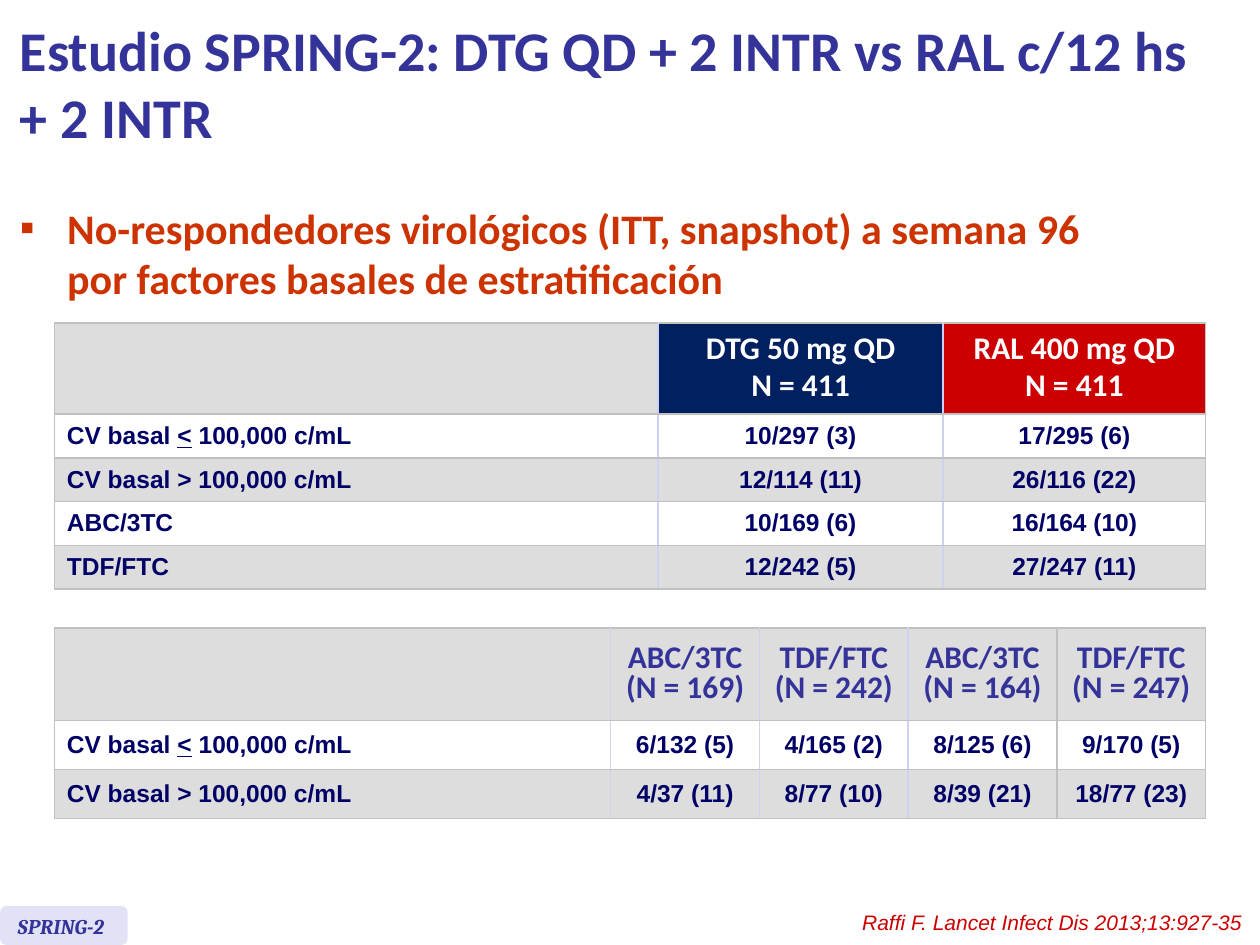
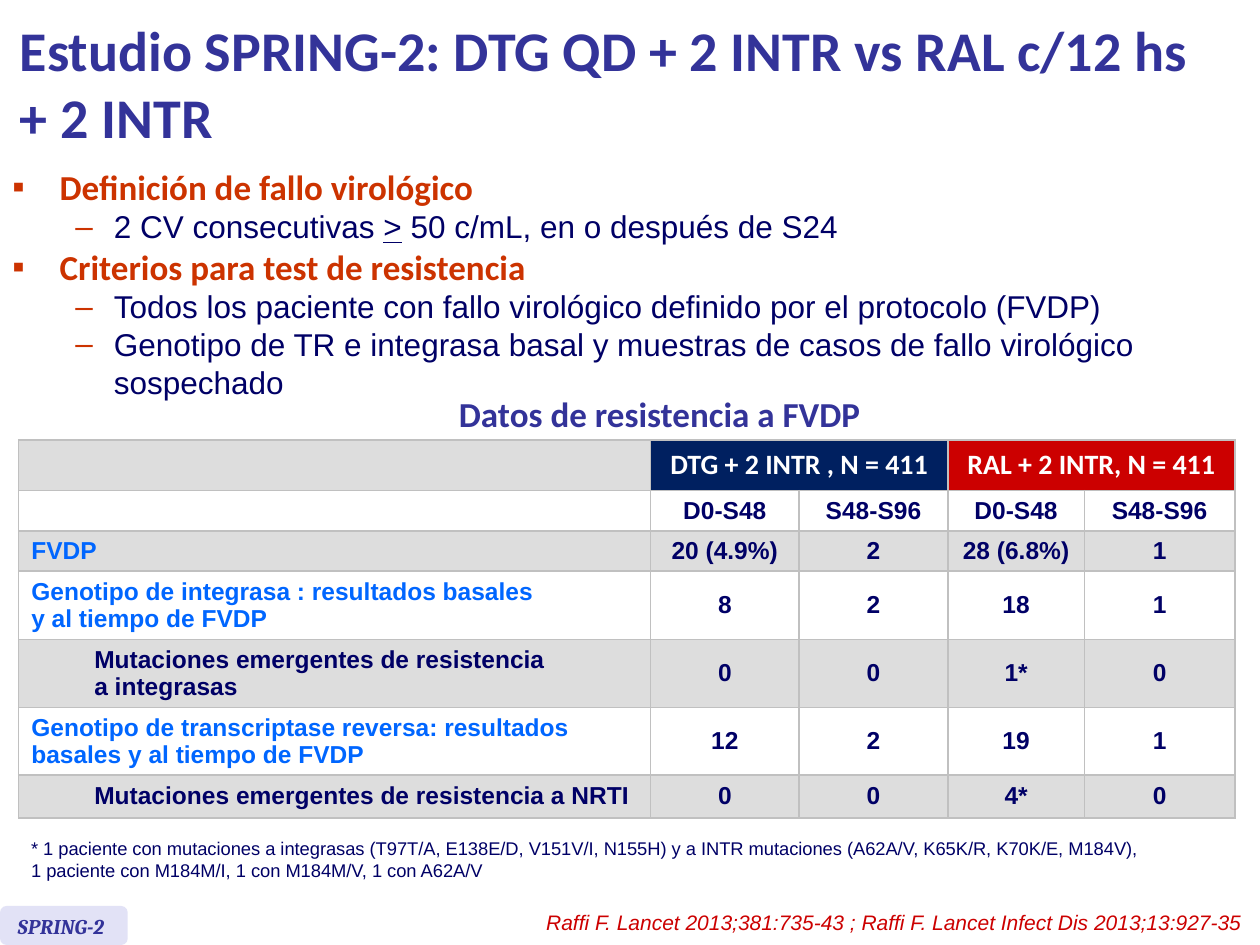
"""Build two SPRING-2 study slides: non-responders by stratum and resistance data."""
from dataclasses import dataclass, replace

from lxml import etree
from pptx import Presentation
from pptx.dml.color import RGBColor
from pptx.enum.shapes import MSO_SHAPE
from pptx.enum.text import MSO_ANCHOR, PP_ALIGN
from pptx.oxml.ns import qn
from pptx.util import Pt

LEFT, CENTER, RIGHT = PP_ALIGN.LEFT, PP_ALIGN.CENTER, PP_ALIGN.RIGHT
TOP, MIDDLE = MSO_ANCHOR.TOP, MSO_ANCHOR.MIDDLE
ROUNDED = MSO_SHAPE.ROUNDED_RECTANGLE

INDIGO = RGBColor(0x33, 0x33, 0x99)
ORANGE = RGBColor(0xCC, 0x33, 0x00)
NAVY = RGBColor(0x00, 0x00, 0x66)
DEEP_BLUE = RGBColor(0x00, 0x20, 0x60)
BRIGHT_BLUE = RGBColor(0x00, 0x66, 0xFF)
RED = RGBColor(0xCC, 0x00, 0x00)
WHITE = RGBColor(0xFF, 0xFF, 0xFF)
GREY = RGBColor(0xDD, 0xDD, 0xDD)
LAVENDER = RGBColor(0xE2, 0xE2, 0xF6)
BORDER_GREY = RGBColor(0xC0, 0xC0, 0xC0)
BORDER_LILAC = RGBColor(0xD0, 0xD0, 0xF0)


@dataclass(frozen=True)
class Style:
    """Character formatting of a span."""
    font: str
    size: float
    color: RGBColor
    bold: bool = False
    italic: bool = False


TITLE = Style("Calibri", 32, INDIGO, bold=True)
HEADLINE = Style("Calibri", 24, ORANGE, bold=True)
TOPIC = Style("Calibri", 20, ORANGE, bold=True)
DETAIL = Style("Arial", 18, NAVY)
CAPTION = Style("Calibri", 20, INDIGO, bold=True)
ARM_HEAD = Style("Calibri", 18, WHITE, bold=True)
ARM_HEAD_SMALL = replace(ARM_HEAD, size=16)
DRUG_HEAD = replace(ARM_HEAD, color=INDIGO)
CELL = Style("Arial", 14, NAVY, bold=True)
CELL_BLUE = replace(CELL, color=BRIGHT_BLUE)
FOOTNOTE = Style("Arial", 10.5, NAVY)
CITATION = Style("Arial", 12, RED, italic=True)
TAG = Style("Cambria", 12, INDIGO, bold=True, italic=True)

LOW_LOAD = "CV basal _<_ 100,000 c/mL"
HIGH_LOAD = "CV basal > 100,000 c/mL"


def add_spans(para, text, style):
    """Add text to a paragraph; \\v breaks the line and _x_ underlines x."""
    for line_index, line in enumerate(text.split("\v")):
        if line_index:
            para.add_line_break()
        for part_index, part in enumerate(line.split("_")):
            if not part:
                continue
            span = para.add_run()
            span.text = part
            font = span.font
            font.name, font.size = style.font, Pt(style.size)
            font.bold, font.italic = style.bold, style.italic
            font.color.rgb = style.color
            if part_index % 2:
                font.underline = True


def fill_frame(frame, text, style, align=LEFT, line_spacing=None, gap=0):
    """Write newline-separated paragraphs into a text frame."""
    for index, content in enumerate(text.split("\n")):
        para = frame.add_paragraph() if index else frame.paragraphs[0]
        para.alignment = align
        if line_spacing:
            para.line_spacing = line_spacing
        if index and gap:
            para.space_before = Pt(gap)
        add_spans(para, content, style)


def add_frame(page, left, top, width, height, anchor=TOP):
    """Add an empty wrapping text box and return its frame."""
    box = page.shapes.add_textbox(Pt(left), Pt(top), Pt(width), Pt(height))
    frame = box.text_frame
    frame.word_wrap = True
    frame.vertical_anchor = anchor
    return frame


def add_text(page, place, text, style, align=LEFT, anchor=TOP):
    """Add a text box with one style."""
    fill_frame(add_frame(page, *place, anchor=anchor), text, style, align)


def set_indent(para, left, first=0):
    """Set the left margin and first-line indent of a paragraph."""
    properties = para._p.get_or_add_pPr()
    properties.set("marL", str(Pt(left)))
    properties.set("indent", str(Pt(first)))
    return properties


def add_bullets(page, place, items):
    """Add a bullet list of (style, text) items; details sit one level down."""
    frame = add_frame(page, *place)
    for index, (style, text) in enumerate(items):
        para = frame.add_paragraph() if index else frame.paragraphs[0]
        if style is DETAIL:
            para.level = 1
            properties, mark = set_indent(para, 58, -22), "–"
        else:
            properties, mark = set_indent(para, 27, -27), "▪"
        bullet_color = etree.SubElement(properties, qn("a:buClr"))
        etree.SubElement(bullet_color, qn("a:srgbClr"), val=str(ORANGE))
        etree.SubElement(properties, qn("a:buFont"), typeface="Arial")
        etree.SubElement(properties, qn("a:buChar"), char=mark)
        add_spans(para, text, style)


def set_borders(cell, left, right):
    """Draw one-point borders, with grey above and below."""
    properties = cell._tc.get_or_add_tcPr()
    sides = {"a:lnL": left, "a:lnR": right, "a:lnT": BORDER_GREY, "a:lnB": BORDER_GREY}
    for index, (tag, color) in enumerate(sides.items()):
        line = etree.Element(qn(tag), w=str(Pt(1)))
        solid = etree.SubElement(line, qn("a:solidFill"))
        etree.SubElement(solid, qn("a:srgbClr"), val=str(color))
        properties.insert(index, line)


def add_grid(page, left, top, widths, heights, lilac_edges=()):
    """Add a table with alternating grey and white rows."""
    table = page.shapes.add_table(len(heights), len(widths), Pt(left), Pt(top),
                                  Pt(sum(widths)), Pt(sum(heights))).table
    table.first_row = table.horz_banding = False
    for column, width in zip(table.columns, widths):
        column.width = Pt(width)
    edges = [BORDER_LILAC if edge in lilac_edges else BORDER_GREY
             for edge in range(len(widths) + 1)]
    for row_index, (row, height) in enumerate(zip(table.rows, heights)):
        row.height = Pt(height)
        for index, cell in enumerate(row.cells):
            cell.fill.solid()
            cell.fill.fore_color.rgb = WHITE if row_index % 2 else GREY
            cell.vertical_anchor = MIDDLE
            cell.margin_top = cell.margin_bottom = 0
            set_borders(cell, edges[index], edges[index + 1])
    return table


def write_cell(cell, text, style, align=CENTER, line_spacing=None, fill=None):
    """Write a table cell and optionally recolour it."""
    fill_frame(cell.text_frame, text, style, align, line_spacing, gap=3.6)
    if fill is not None:
        cell.fill.solid()
        cell.fill.fore_color.rgb = fill


def write_rows(table, first_row, rows):
    """Write body rows, each with a left label and centred values."""
    for row_index, (label, *values) in enumerate(rows, first_row):
        if label:
            write_cell(table.cell(row_index, 0), label, CELL, LEFT)
        for column, value in enumerate(values, 1):
            write_cell(table.cell(row_index, column), value, CELL)


def add_page(deck, citation):
    """Add a blank page with the shared title, study tag and citation."""
    page = deck.slides.add_slide(deck.slide_layouts[6])
    add_text(page, (4.3, 3.6, 711, 87),
             "Estudio SPRING-2: DTG QD + 2 INTR vs RAL c/12 hs\v+ 2 INTR",
             TITLE, anchor=MIDDLE)
    add_text(page, (273, 516, 444, 22), citation, CITATION, RIGHT)
    badge = page.shapes.add_shape(ROUNDED, 0, Pt(517.7), Pt(73), Pt(22.3))
    badge.shadow.inherit = False
    badge.fill.solid()
    badge.fill.fore_color.rgb = LAVENDER
    badge.line.fill.background()
    add_text(page, (3, 518.4, 72, 21.6), "SPRING-2", TAG)
    return page


def add_nonresponder_page(deck):
    """Add the page of non-responders by baseline stratum."""
    page = add_page(deck, "Raffi F. Lancet Infect Dis 2013;13:927-35")
    add_bullets(page, (4.3, 112, 711, 63), [
        (HEADLINE, "No-respondedores virológicos (ITT, snapshot) a semana 96"
                   "\vpor factores basales de estratificación")])

    arms = add_grid(page, 31, 184.7, (345, 163, 150), (52,) + (25,) * 4, {1, 2})
    write_cell(arms.cell(0, 1), "DTG 50 mg QD\nN = 411", ARM_HEAD, CENTER, 0.8, DEEP_BLUE)
    write_cell(arms.cell(0, 2), "RAL 400 mg QD\nN = 411", ARM_HEAD, CENTER, 0.8, RED)
    write_rows(arms, 1, [
        (LOW_LOAD, "10/297 (3)", "17/295 (6)"),
        (HIGH_LOAD, "12/114 (11)", "26/116 (22)"),
        ("ABC/3TC", "10/169 (6)", "16/164 (10)"),
        ("TDF/FTC", "12/242 (5)", "27/247 (11)"),
    ])

    drugs = add_grid(page, 31, 358.8, (318,) + (85,) * 4, (53, 28, 28), {1, 2, 3})
    heads = ("ABC/3TC\v(N = 169)", "TDF/FTC\v(N = 242)",
             "ABC/3TC\v(N = 164)", "TDF/FTC\v(N = 247)")
    for column, head in enumerate(heads, 1):
        write_cell(drugs.cell(0, column), head, DRUG_HEAD, CENTER, 0.8)
    write_rows(drugs, 1, [
        (LOW_LOAD, "6/132 (5)", "4/165 (2)", "8/125 (6)", "9/170 (5)"),
        (HIGH_LOAD, "4/37 (11)", "8/77 (10)", "8/39 (21)", "18/77 (23)"),
    ])


def add_resistance_page(deck):
    """Add the page of virological failure and resistance data."""
    page = add_page(deck, "Raffi F. Lancet 2013;381:735-43 ; "
                          "Raffi F. Lancet Infect Dis 2013;13:927-35")
    add_bullets(page, (0, 91, 698, 145), [
        (TOPIC, "Definición de fallo virológico"),
        (DETAIL, "2 CV consecutivas _>_ 50 c/mL, en o después de S24"),
        (TOPIC, "Criterios para test de resistencia"),
        (DETAIL, "Todos los paciente con fallo virológico definido por el protocolo (FVDP)"),
        (DETAIL, "Genotipo de TR e integrasa basal y muestras de casos de fallo "
                 "virológico sospechado"),
    ])
    add_text(page, (254, 221, 246, 29), "Datos de resistencia a FVDP", CAPTION, CENTER)

    table = add_grid(page, 10.7, 251.4, (361, 85, 85, 78, 86),
                     (29, 23, 23, 39, 39, 38.5, 24.5))
    arms = ((1, "DTG + 2 INTR , N = 411", DEEP_BLUE), (3, "RAL + 2 INTR, N = 411", RED))
    for column, head, fill in arms:
        table.cell(0, column).merge(table.cell(0, column + 1))
        write_cell(table.cell(0, column), head, ARM_HEAD_SMALL, fill=fill)
    write_rows(table, 1, [
        ("", "D0-S48", "S48-S96", "D0-S48", "S48-S96"),
        ("", "20 (4.9%)", "2", "28 (6.8%)", "1"),
        ("", "8", "2", "18", "1"),
        ("Mutaciones emergentes de resistencia\va integrasas", "0", "0", "1*", "0"),
        ("", "12", "2", "19", "1"),
        ("Mutaciones emergentes de resistencia a NRTI", "0", "0", "4*", "0"),
    ])
    blue_labels = {
        2: "FVDP",
        3: "Genotipo de integrasa : resultados basales\vy al tiempo de FVDP",
        5: "Genotipo de transcriptase reversa: resultados basales y al tiempo de FVDP",
    }
    for row_index, label in blue_labels.items():
        write_cell(table.cell(row_index, 0), label, CELL_BLUE, LEFT)
    for row_index in (4, 6):
        set_indent(table.cell(row_index, 0).text_frame.paragraphs[0], 36)

    add_text(page, (10.7, 475, 680, 32),
             "* 1 paciente con mutaciones a integrasas (T97T/A, E138E/D, V151V/I, N155H) "
             "y a INTR mutaciones (A62A/V, K65K/R, K70K/E, M184V),\n"
             "1 paciente con M184M/I, 1 con M184M/V, 1 con A62A/V", FOOTNOTE)


def main():
    """Build and save the deck."""
    deck = Presentation()
    deck.slide_width, deck.slide_height = Pt(720), Pt(540)
    add_nonresponder_page(deck)
    add_resistance_page(deck)
    deck.save("out.pptx")


if __name__ == "__main__":
    main()
